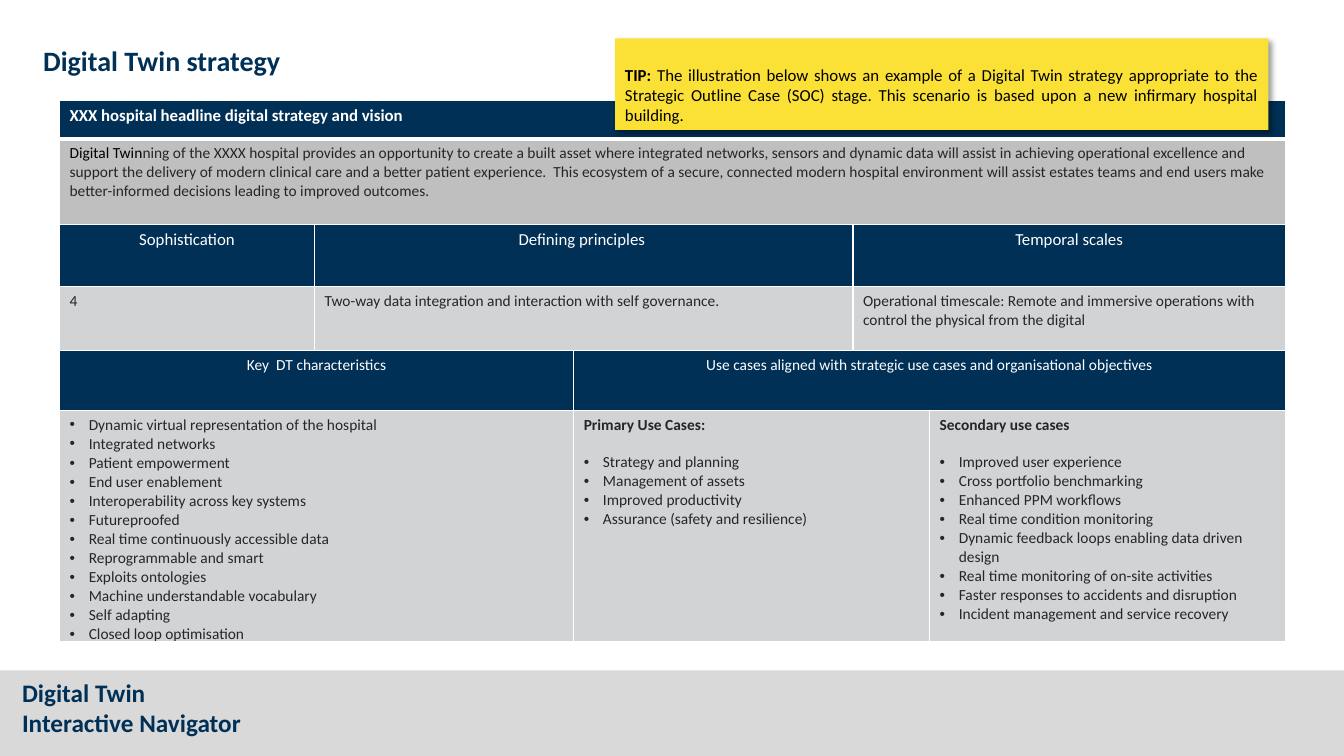
from dataclasses import dataclass
from lxml import etree
from pptx import Presentation
from pptx import util as u
from pptx.dml.color import RGBColor
from pptx.enum import shapes, text
from pptx.oxml import parse_xml
from pptx.oxml.ns import nsdecls, qn


@dataclass(frozen=True)
class Theme:
    face: str = "Calibri"
    navy: str = "003056"
    white: str = "FFFFFF"
    black: str = "000000"
    ink: str = "262626"
    pale: str = "D2D3D5"
    mid: str = "BFBFBF"
    band: str = "D9D9D9"
    tip: str = "FBE136"
    title: int = 20
    brand: int = 18
    head: int = 12
    body: int = 11


T = Theme()
ALIGN = text.PP_ALIGN


def write(para, words, size, color, bold=False):
    run = para.add_run()
    run.text = words
    form = {"name": T.face, "size": u.Pt(size), "bold": bold}
    for key, val in form.items():
        setattr(run.font, key, val)
    run.font.color.rgb = RGBColor.from_string(color)


def dress(cell, fill, top, base):
    """Give a cell its white borders (widths in points) and its fill."""
    props = cell._tc.get_or_add_tcPr()
    for side, width in {"L": 1, "R": 1, "T": top, "B": base}.items():
        props.append(parse_xml(
            f'<a:ln{side} {nsdecls("a")} w="{u.Pt(width)}"><a:solidFill>'
            f'<a:srgbClr val="{T.white}"/></a:solidFill></a:ln{side}>'))
    cell.fill.solid()
    cell.fill.fore_color.rgb = RGBColor.from_string(fill)


deck = Presentation()
deck.slide_width, deck.slide_height = u.Inches(13.33), u.Inches(7.5)
slide = deck.slides.add_slide(deck.slide_layouts[6])

# Footer band and headings
band = slide.shapes.add_shape(
    shapes.MSO_SHAPE.RECTANGLE, u.Inches(0), u.Inches(6.65), u.Inches(13.33), u.Inches(0.85))
band.shadow.inherit = False
band.fill.solid()
band.fill.fore_color.rgb = RGBColor.from_string(T.band)
band.line.fill.background()

labels = [
    ((0.12, 6.67, 4.05, 0.71), T.brand, ["Digital Twin", "Interactive Navigator"]),
    ((0.33, 0.38, 3.5, 0.44), T.title, ["Digital Twin strategy"]),
]
for place, size, lines in labels:
    frame = slide.shapes.add_textbox(*map(u.Inches, place)).text_frame
    frame.word_wrap = True
    for i, line in enumerate(lines):
        para = frame.add_paragraph() if i else frame.paragraphs[0]
        write(para, line, size, T.navy, True)

# Strategy table
widths = [2.53, 2.57, 2.77, 0.76, 3.53]
heights = [0.38, 0.85, 0.61, 0.64, 0.59, 2.3]
fills = [T.navy, T.mid, T.navy, T.pale, T.navy, T.pale]
grid = slide.shapes.add_table(
    len(heights), len(widths), u.Inches(0.59), u.Inches(1),
    u.Inches(sum(widths)), u.Inches(sum(heights))).table
for col, width in zip(grid.columns, widths):
    col.width = u.Inches(width)
for r, (row, height) in enumerate(zip(grid.rows, heights)):
    row.height = u.Inches(height)
    for cell in row.cells:
        dress(cell, fills[r], 3 if r == 1 else 1, 3 if r == 0 else 1)

# Row, first column, last column, words, size, colour, bold, alignment
entries = [
    (0, 0, 4, "XXX hospital headline digital strategy and vision", T.head, T.white, True, ALIGN.LEFT),
    (1, 0, 4, "Digital Twin", T.body, T.black, False, ALIGN.LEFT),
    (2, 0, 0, "Sophistication", T.head, T.white, False, ALIGN.CENTER),
    (2, 1, 2, "Defining principles ", T.head, T.white, False, ALIGN.CENTER),
    (2, 3, 4, "Temporal scales", T.head, T.white, False, ALIGN.CENTER),
    (3, 0, 0, "4", T.body, T.ink, False, ALIGN.LEFT),
    (3, 1, 2, "Two-way data integration and interaction with self governance.",
     T.body, T.ink, False, ALIGN.LEFT),
    (3, 3, 4, "Operational timescale: Remote and immersive operations with control the "
     "physical from the digital", T.body, T.ink, False, ALIGN.LEFT),
    (4, 0, 1, "Key  DT characteristics", T.body, T.white, False, ALIGN.CENTER),
    (4, 2, 4, "Use cases aligned with strategic use cases and organisational objectives",
     T.body, T.white, False, ALIGN.CENTER),
]
for r, first, last, words, size, color, bold, align in entries:
    cell = grid.cell(r, first)
    if last > first:
        cell.merge(grid.cell(r, last))
    para = cell.text_frame.paragraphs[0]
    para.alignment = align
    write(para, words, size, color, bold)

write(grid.cell(1, 0).text_frame.paragraphs[0],
      "ning of the XXXX hospital provides an opportunity to create a built asset where "
      "integrated networks, sensors and dynamic data will assist in achieving operational "
      "excellence and support the delivery of modern clinical care and a better patient "
      "experience.  This ecosystem of a secure, connected modern hospital environment will "
      "assist estates teams and end users make better-informed decisions leading to improved "
      "outcomes.", T.body, T.ink)

# Bulleted cells: first column, last column, heading, points
lists = [
    (0, 1, None, [
        "Dynamic virtual representation of the hospital", "Integrated networks",
        "Patient empowerment", "End user enablement", "Interoperability across key systems",
        "Futureproofed", "Real time continuously accessible data",
        "Reprogrammable and smart", "Exploits ontologies",
        "Machine understandable vocabulary", "Self adapting", "Closed loop optimisation"]),
    (2, 3, "Primary Use Cases:", [
        "Strategy and planning", "Management of assets", "Improved productivity",
        "Assurance (safety and resilience)"]),
    (4, 4, "Secondary use cases", [
        "Improved user experience", "Cross portfolio benchmarking", "Enhanced PPM workflows",
        "Real time condition monitoring", "Dynamic feedback loops enabling data driven design",
        "Real time monitoring of on-site activities",
        "Faster responses to accidents and disruption",
        "Incident management and service recovery"]),
]
for first, last, heading, points in lists:
    cell = grid.cell(5, first)
    if last > first:
        cell.merge(grid.cell(5, last))
    cell.margin_bottom = 0
    frame = cell.text_frame
    para = frame.paragraphs[0]
    if heading:
        write(para, heading, T.body, T.ink, True)
        para.space_after = u.Pt(13.4)
        para = frame.add_paragraph()
    for i, point in enumerate(points):
        if i:
            para = frame.add_paragraph()
        props = para._p.get_or_add_pPr()
        props.set("marL", str(u.Inches(0.19)))
        props.set("indent", str(-u.Inches(0.19)))
        etree.SubElement(props, qn("a:buFont")).set("typeface", "Arial")
        etree.SubElement(props, qn("a:buChar")).set("char", "•")
        write(para, point, T.body, T.ink)

# Tip note
note = slide.shapes.add_shape(
    shapes.MSO_SHAPE.RECTANGLE, u.Inches(6.1), u.Inches(0.38), u.Inches(6.48), u.Inches(0.91))
note.fill.solid()
note.fill.fore_color.rgb = RGBColor.from_string(T.tip)
note.line.fill.background()
note._element.spPr.append(parse_xml(
    f'<a:effectLst {nsdecls("a")}><a:outerShdw blurRad="{u.Pt(4)}" dist="{u.Pt(3)}" '
    f'dir="2700000" algn="tl" rotWithShape="0"><a:srgbClr val="{T.black}">'
    '<a:alpha val="40000"/></a:srgbClr></a:outerShdw></a:effectLst>'))
frame = note.text_frame
frame.word_wrap = True
frame.vertical_anchor = text.MSO_ANCHOR.BOTTOM
para = frame.paragraphs[0]
para.alignment = ALIGN.JUSTIFY
write(para, "TIP: ", T.head, T.black, True)
write(para, "The illustration below shows an example of a Digital Twin strategy appropriate to "
      "the Strategic Outline Case (SOC) stage. This scenario is based upon a new infirmary "
      "hospital building.", T.head, T.black)

deck.save("out.pptx")
